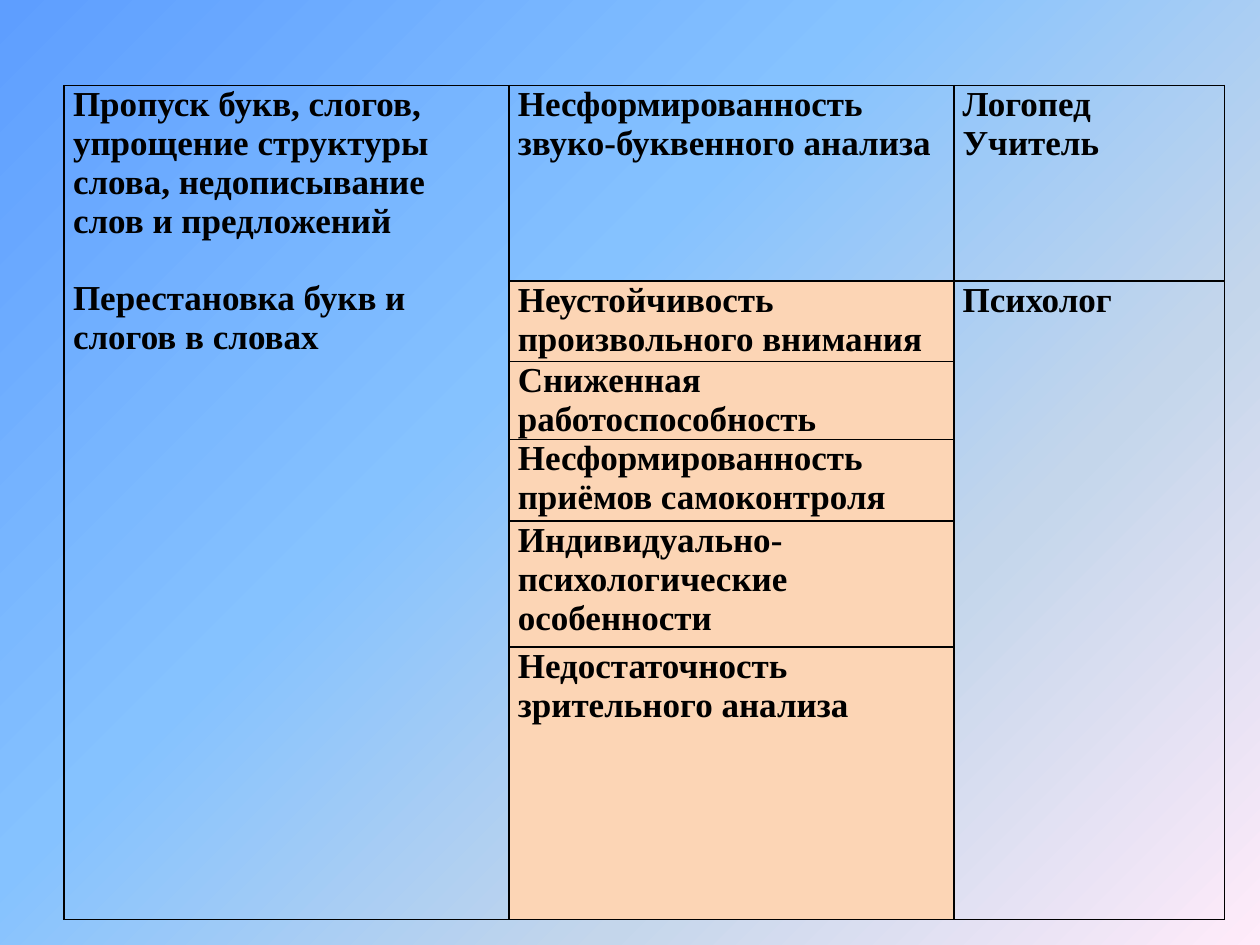
from dataclasses import dataclass

from lxml.etree import SubElement
from pptx import Presentation
from pptx.dml.color import RGBColor as RGB
from pptx.oxml.ns import qn
from pptx.util import Inches, Pt


@dataclass(frozen=True)
class Theme:
    font: str = "Times New Roman"
    size: int = 20
    gap: int = 22
    ink: str = "000000"
    peach: str = "FCD5B5"
    line: int = 1
    sky: tuple = ((0, "5E9EFF"), (40, "85C2FF"), (70, "C4D6EB"), (100, "FFEBFA"))
    angle: int = 315


THEME = Theme()
COLS = (3.53, 3.53, 2.15)
ROWS = (1.55, 0.64, 0.61, 0.65, 1, 2.16)

ERRORS = (
    "Пропуск букв, слогов, упрощение структуры слова, недописывание слов и предложений",
    "Перестановка букв и слогов в словах",
)
CAUSES = (
    "Несформированность звуко-буквенного анализа",
    "Неустойчивость произвольного внимания",
    "Сниженная работоспособность",
    "Несформированность приёмов самоконтроля",
    "Индивидуально-психологические особенности",
    "Недостаточность зрительного анализа",
)
EXPERTS = ("Логопед", "Учитель")


def add_color(parent, color):
    SubElement(parent, qn("a:srgbClr")).set("val", color)


def paint_sky(slide):
    """Give the background its diagonal gradient of several stops."""
    fill = slide.background.fill
    fill.gradient()
    fill.gradient_angle = THEME.angle
    stops = slide.element.find(".//" + qn("a:gsLst"))
    for stop in list(stops):
        stops.remove(stop)
    for place, color in THEME.sky:
        stop = SubElement(stops, qn("a:gs"))
        stop.set("pos", str(place * 1000))
        add_color(stop, color)


def style_cell(cell, color=None):
    """Set borders, margins and fill; no colour leaves the cell clear."""
    props = cell._tc.get_or_add_tcPr()
    for side in ("lnL", "lnR", "lnT", "lnB"):
        line = SubElement(props, qn("a:" + side))
        line.set("w", str(Pt(THEME.line)))
        add_color(SubElement(line, qn("a:solidFill")), THEME.ink)
    cell.margin_left = cell.margin_right = Inches(0.07)
    cell.margin_top = cell.margin_bottom = 0
    if color:
        cell.fill.solid()
        cell.fill.fore_color.rgb = RGB.from_string(color)
    else:
        cell.fill.background()


def write(cell, *lines, gap=0):
    frame = cell.text_frame
    frame.text = "\n".join(lines)
    for para in frame.paragraphs:
        for run in para.runs:
            font = run.font
            font.name = THEME.font
            font.size = Pt(THEME.size)
            font.bold = True
            font.color.rgb = RGB.from_string(THEME.ink)
    frame.paragraphs[0].space_after = Pt(gap)


def add_grid(slide):
    frame = slide.shapes.add_table(
        len(ROWS), len(COLS), Inches(0.51), Inches(0.68),
        Inches(sum(COLS)), Inches(sum(ROWS)))
    grid = frame.table
    grid.first_row = grid.horz_banding = False
    for col, width in zip(grid.columns, COLS):
        col.width = Inches(width)
    for row, height in zip(grid.rows, ROWS):
        row.height = Inches(height)
    for r in range(len(ROWS)):
        for c in range(len(COLS)):
            style_cell(grid.cell(r, c), THEME.peach if r and c == 1 else None)
    return grid


def main():
    deck = Presentation()
    deck.slide_width, deck.slide_height = Inches(10), Inches(7.5)
    slide = deck.slides.add_slide(deck.slide_layouts[6])
    paint_sky(slide)

    grid = add_grid(slide)
    last = len(ROWS) - 1
    grid.cell(0, 0).merge(grid.cell(last, 0))
    grid.cell(1, 2).merge(grid.cell(last, 2))
    write(grid.cell(0, 0), *ERRORS, gap=THEME.gap)
    for r, cause in enumerate(CAUSES):
        write(grid.cell(r, 1), cause)
    write(grid.cell(0, 2), *EXPERTS)
    write(grid.cell(1, 2), "Психолог")
    deck.save("out.pptx")


if __name__ == "__main__":
    main()
